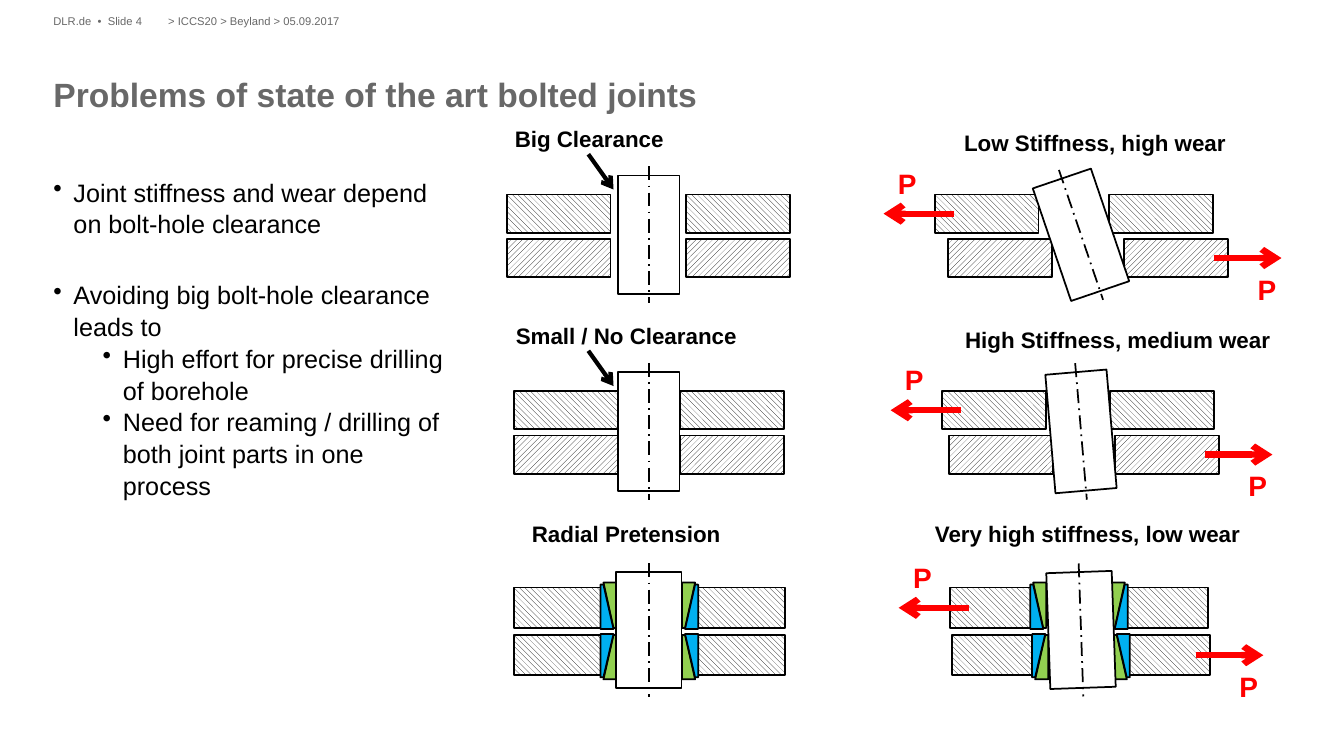
import math

import lxml.etree
import pptx
import pptx.dml.color
import pptx.enum.dml
import pptx.enum.shapes
import pptx.enum.text
import pptx.oxml.ns
import pptx.util

SLIDE_SIZE = (13.34, 7.5)
MARGIN = 0.53
FONT = "Arial"
BLACK, GREY, WHITE, RED = "000000", "686868", "FFFFFF", "FF0000"
GREEN, BLUE = "92D050", "00B0F0"

TITLE = "Problems of state of the art bolted joints"
HEADER = [(MARGIN, 1.14, "DLR.de  •  Slide 4"),
          (1.67, 11.13, "> ICCS20 > Beyland > 05.09.2017")]
BULLETS = [
    (0.2, 0, "Joint stiffness and wear depend on bolt-hole clearance"),
    (0.2, 28, "Avoiding big bolt-hole clearance leads to"),
    (0.69, 0, "High effort for precise drilling of borehole"),
    (0.69, 0, "Need for reaming / drilling of both joint parts in one process"),
]

BOLT_CENTERS = (6.44, 10.73)
FIRST_ROW, ROW_PITCH = 1.93, 1.95
PLAIN = {"plate_height": 0.38, "plate_pitch": 0.44, "bolt": (0.61, 1.18),
         "bolt_drop": 0.4, "axis": 1.36, "wedges": False}
WEDGED = {"plate_height": 0.4, "plate_pitch": 0.47, "bolt": (0.65, 1.15),
          "bolt_drop": 0.42, "axis": 1.32, "wedges": True}
ROW_STYLES = (PLAIN, PLAIN, WEDGED)
# Plate positions are left edges measured from the bolt centre.
JOINTS = [
    {"column": 0, "row": 0, "label": "Big Clearance", "label_at": (-1.33, -0.69),
     "plates": [(-1.41, 0.37), (-1.41, 0.37)], "plate_width": 1.03,
     "tilt": 0, "pulled": False, "pointer": True},
    {"column": 1, "row": 0, "label": "Low Stiffness, high wear", "label_at": (-1.16, -0.65),
     "plates": [(-1.45, 0.28), (-1.32, 0.43)], "plate_width": 1.03,
     "tilt": -18.8, "pulled": True, "pointer": False},
    {"column": 0, "row": 1, "label": "Small / No Clearance", "label_at": (-1.32, -0.68),
     "plates": [(-1.34, 0.31), (-1.34, 0.31)], "plate_width": 1.03,
     "tilt": 0, "pulled": False, "pointer": True},
    {"column": 1, "row": 1, "label": "High Stiffness, medium wear", "label_at": (-1.15, -0.64),
     "plates": [(-1.38, 0.29), (-1.31, 0.34)], "plate_width": 1.03,
     "tilt": -4.9, "pulled": True, "pointer": False},
    {"column": 0, "row": 2, "label": "Radial Pretension", "label_at": (-1.16, -0.67),
     "plates": [(-1.34, 0.48), (-1.34, 0.48)], "plate_width": 0.87,
     "tilt": 0, "pulled": False, "pointer": False},
    {"column": 1, "row": 2, "label": "Very high stiffness, low wear", "label_at": (-1.45, -0.67),
     "plates": [(-1.3, 0.45), (-1.28, 0.47)], "plate_width": 0.81,
     "tilt": -2, "pulled": True, "pointer": False},
]

inches = pptx.util.Inches
presentation = pptx.Presentation()
presentation.slide_width, presentation.slide_height = map(inches, SLIDE_SIZE)
slide = presentation.slides.add_slide(presentation.slide_layouts[5])


def color(value):
    return pptx.dml.color.RGBColor.from_string(value)


def style_font(font, size, value, bold=False):
    font.name, font.size, font.bold = FONT, pptx.util.Pt(size), bold
    font.color.rgb = color(value)


def prepare_frame(shape):
    frame = shape.text_frame
    frame.word_wrap = True
    frame.auto_size = pptx.enum.text.MSO_AUTO_SIZE.NONE
    frame.vertical_anchor = pptx.enum.text.MSO_ANCHOR.TOP
    frame.margin_left = frame.margin_right = frame.margin_top = frame.margin_bottom = 0
    return frame


def add_text(box, text, size, value, bold=False, centered=False):
    frame = prepare_frame(slide.shapes.add_textbox(*map(inches, box)))
    paragraph = frame.paragraphs[0]
    paragraph.text = text
    if centered:
        paragraph.alignment = pptx.enum.text.PP_ALIGN.CENTER
    style_font(paragraph.font, size, value, bold)


def outline(shape):
    shape.shadow.inherit = False
    shape.line.color.rgb = color(BLACK)
    shape.line.width = pptx.util.Pt(1.25)


def add_rectangle(left, top, width, height):
    shape = slide.shapes.add_shape(pptx.enum.shapes.MSO_SHAPE.RECTANGLE,
                                   *map(inches, (left, top, width, height)))
    outline(shape)
    return shape


def add_plate(left, top, width, height, pattern):
    fill = add_rectangle(left, top, width, height).fill
    fill.patterned()
    fill.pattern = pattern
    fill.fore_color.rgb, fill.back_color.rgb = color(BLACK), color(WHITE)


def add_line(start, end, value, width, arrow=False):
    connector = slide.shapes.add_connector(pptx.enum.shapes.MSO_CONNECTOR.STRAIGHT,
                                           *map(inches, start + end))
    connector.line.color.rgb = color(value)
    connector.line.width = pptx.util.Pt(width)
    if arrow:
        lxml.etree.SubElement(connector.line._get_or_add_ln(),
                              pptx.oxml.ns.qn("a:tailEnd"), type="arrow")
    else:
        connector.line.dash_style = pptx.enum.dml.MSO_LINE.LONG_DASH_DOT
    lxml.etree.SubElement(connector._element.spPr, pptx.oxml.ns.qn("a:effectLst"))


def add_polygon(points, value):
    corners = [(inches(x), inches(y)) for x, y in points]
    builder = slide.shapes.build_freeform(*corners[0])
    builder.add_line_segments(corners[1:], close=True)
    shape = builder.convert_to_shape()
    outline(shape)
    shape.fill.solid()
    shape.fill.fore_color.rgb = color(value)


def add_wedge_pair(edge, side, wide, narrow):
    toward = math.copysign(1, narrow - wide)
    thin, thick, outer = (edge + side * offset for offset in (0.03, 0.13, 0.16))
    add_polygon([(thick, wide), (edge, wide), (edge, narrow), (thin, narrow)], GREEN)
    wide, narrow = wide + 0.02 * toward, narrow + 0.01 * toward
    add_polygon([(thin, narrow), (outer, narrow), (outer, wide), (thick, wide)], BLUE)


def add_pull(start, y, length, label_shift, label_drop):
    tip = start + length
    add_line((start, y), (tip, y), RED, 4.5, arrow=True)
    add_text((tip + label_shift, y + label_drop, 0.45, 0.3), "P", 20, RED, True, True)


def add_joint(joint):
    style = ROW_STYLES[joint["row"]]
    center = BOLT_CENTERS[joint["column"]]
    top = FIRST_ROW + joint["row"] * ROW_PITCH
    width, height = joint["plate_width"], style["plate_height"]
    bolt_width, bolt_height = style["bolt"]
    down = pptx.enum.dml.MSO_PATTERN.WIDE_DOWNWARD_DIAGONAL
    up = pptx.enum.dml.MSO_PATTERN.WIDE_UPWARD_DIAGONAL
    patterns = (down, down if style["wedges"] else up)

    for level, offsets in enumerate(joint["plates"]):
        plate_top = top + level * style["plate_pitch"]
        for offset in offsets:
            add_plate(center + offset, plate_top, width, height, patterns[level])
        if style["wedges"]:
            middle = center + (sum(offsets) + width) / 2
            wide, narrow = ((top - 0.05, top + 0.4), (top + 0.91, top + 0.47))[level]
            for side in (-1, 1):
                add_wedge_pair(middle + side * bolt_width / 2, side, wide, narrow)

    bolt_y = top + style["bolt_drop"]
    bolt = add_rectangle(center - bolt_width / 2, bolt_y - bolt_height / 2,
                         bolt_width, bolt_height)
    bolt.fill.solid()
    bolt.fill.fore_color.rgb = color(WHITE)
    bolt.rotation = joint["tilt"]
    angle = math.radians(joint["tilt"])
    dx, dy = (style["axis"] / 2 * part for part in (math.sin(angle), math.cos(angle)))
    add_line((center + dx, bolt_y - dy), (center - dx, bolt_y + dy), BLACK, 1.25)

    x, y = joint["label_at"]
    add_text((center + x, top + y, 3.3, 0.27), joint["label"], 16, BLACK, True)
    if joint["pointer"]:
        add_line((center - 0.6, top - 0.4), (center - 0.35, top - 0.05), BLACK, 3, arrow=True)
    if joint["pulled"]:
        upper_y = top + height / 2
        add_pull(center + joint["plates"][0][0] + 0.19, upper_y, -0.7, 0.01, -0.47)
        add_pull(center + joint["plates"][1][1] + width - 0.14,
                 upper_y + style["plate_pitch"], 0.67, -0.37, 0.14)


title = slide.shapes.title
title.left, title.top, title.width, title.height = map(inches, (MARGIN, 0.71, 12.27, 0.81))
title_paragraph = prepare_frame(title).paragraphs[0]
title_paragraph.text = TITLE
title_paragraph.alignment = pptx.enum.text.PP_ALIGN.LEFT
title_paragraph.line_spacing = 1.05
style_font(title_paragraph.font, 24, GREY, True)

for left, width, text in HEADER:
    add_text((left, 0.14, width, 0.16), text, 8, GREY)

body = prepare_frame(slide.shapes.add_textbox(*map(inches, (MARGIN, 1.74, 3.93, 4.29))))
for index, (indent, space, text) in enumerate(BULLETS):
    paragraph = body.add_paragraph() if index else body.paragraphs[0]
    paragraph.text = text
    paragraph.line_spacing = 1.05
    paragraph.space_before = pptx.util.Pt(space)
    properties = paragraph._p.get_or_add_pPr()
    properties.set("marL", str(inches(indent)))
    properties.set("indent", str(inches(-0.2)))
    lxml.etree.SubElement(properties, pptx.oxml.ns.qn("a:buChar"), char="•")
    style_font(paragraph.font, 18, BLACK)

for joint in JOINTS:
    add_joint(joint)

presentation.save("out.pptx")
